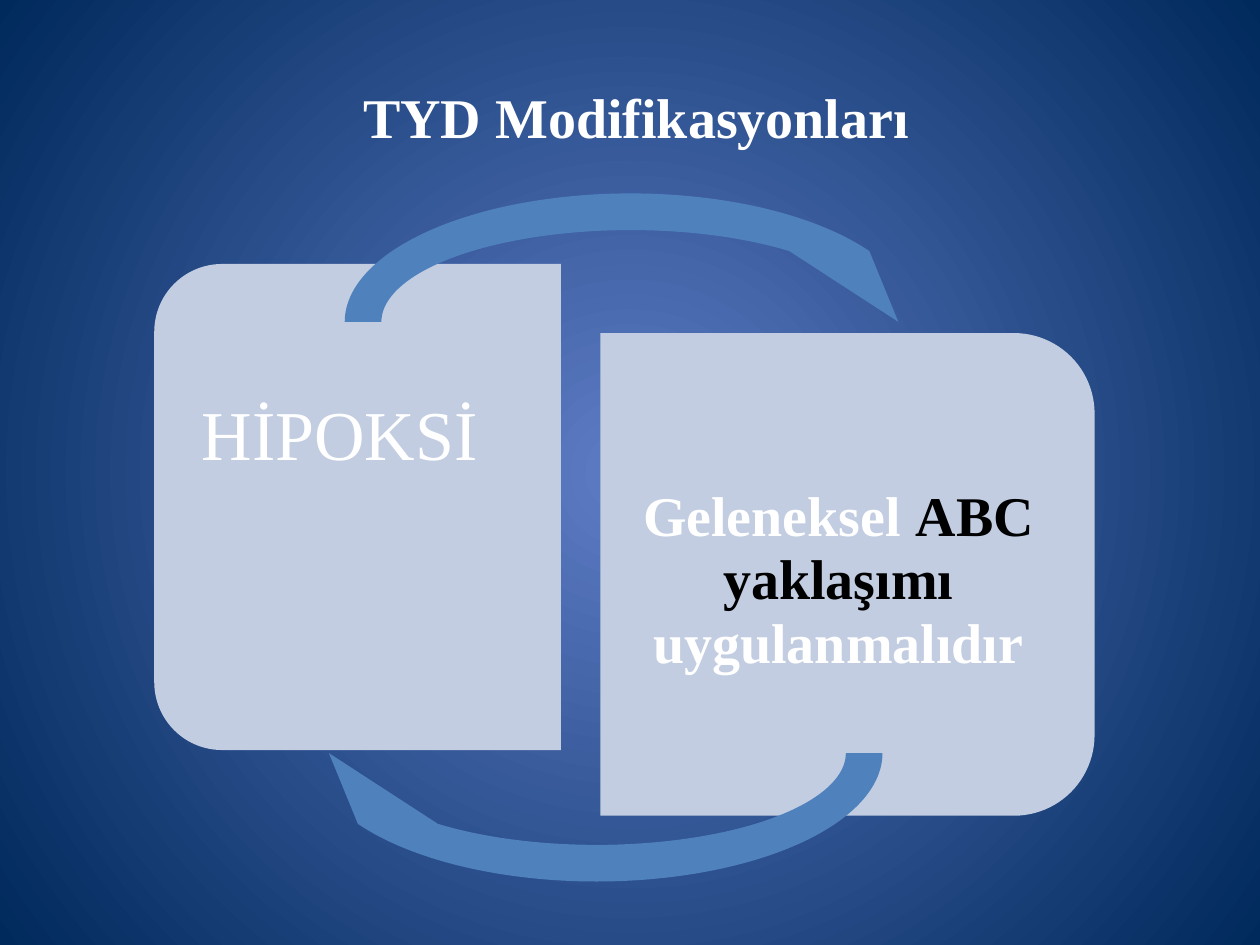
"""Build the TYD Modifikasyonları slide with two panels and a cycle of arrows."""
from lxml import etree
from pptx import Presentation
from pptx.dml.color import RGBColor
from pptx.enum.shapes import MSO_SHAPE as SHAPE
from pptx.enum.text import MSO_ANCHOR as ANCHOR, PP_ALIGN as ALIGN
from pptx.oxml.ns import qn
from pptx.util import Cm, Pt

WHITE, BLACK, PANEL, ARROW = "FFFFFF", "000000", "C2CDE1", "4F81BD"


def rgb(value):
    return RGBColor.from_string(value)


prs = Presentation()
prs.slide_width, prs.slide_height = Cm(25.4), Cm(19.05)
s = prs.slides.add_slide(prs.slide_layouts[6])

fill = s.background.fill
fill.gradient()
for stop, color in zip(fill.gradient_stops, ("5E7CC5", "00295C")):
    stop.color.rgb = rgb(color)
grad = s.background._cSld.find(".//" + qn("a:gradFill"))
grad.remove(grad.find(qn("a:lin")))
circle = etree.SubElement(grad, qn("a:path"), path="circle")
etree.SubElement(circle, qn("a:fillToRect"), {side: "50000" for side in "ltrb"})

panel_adj = (0.167, 0)
arrow_adj = (0.125, 11.423, 204.577, 108, 0.125)
shapes = [
    (SHAPE.ROUND_2_SAME_RECTANGLE, (2.31, 6.12, 9.8, 8.2), 270, panel_adj, PANEL),
    (SHAPE.ROUND_2_SAME_RECTANGLE, (12.22, 6.6, 9.73, 9.96), 90, panel_adj, PANEL),
    (SHAPE.CIRCULAR_ARROW, (6.58, 3.53, 12.27, 5.92), 0, arrow_adj, ARROW),
    (SHAPE.CIRCULAR_ARROW, (5.89, 12.22, 12.27, 5.92), 180, arrow_adj, ARROW),
]
for kind, box, rotation, adjustments, color in shapes:
    sp = s.shapes.add_shape(kind, *map(Cm, box))
    sp.rotation = rotation
    for i, value in enumerate(adjustments):
        sp.adjustments[i] = value
    sp.fill.solid()
    sp.fill.fore_color.rgb = rgb(color)
    sp.line.fill.background()
    sp.shadow.inherit = False

advice = [("Geleneksel ", WHITE), ("ABC yaklaşımı ", BLACK), ("uygulanmalıdır", WHITE)]
texts = [
    ((1.27, 0.76, 22.86, 3.18), (0.25, 0.13, 0.25, 0.13), ANCHOR.MIDDLE, ALIGN.CENTER,
     1, 32, True, [(" TYD Modifikasyonları", WHITE)]),
    ((3.51, 5.72, 7.8, 9), (0.56, 3.91, 0.84, 0.94), ANCHOR.TOP, ALIGN.LEFT,
     0.94, 40, False, [("HİPOKSİ", WHITE)]),
    ((12.09, 8, 9.5, 8.79), (0.38, 1.8, 0.25, 0.43), ANCHOR.TOP, ALIGN.CENTER,
     0.94, 32, True, advice),
]
for box, margins, anchor, align, spacing, size, bold, runs in texts:
    tf = s.shapes.add_textbox(*map(Cm, box)).text_frame
    tf.word_wrap = True
    tf.vertical_anchor = anchor
    tf.margin_left, tf.margin_top, tf.margin_right, tf.margin_bottom = map(Cm, margins)
    p = tf.paragraphs[0]
    p.alignment = align
    p.line_spacing = spacing
    p.font.name, p.font.size, p.font.bold = "Times New Roman", Pt(size), bold
    for text, color in runs:
        r = p.add_run()
        r.text = text
        r.font.color.rgb = rgb(color)

prs.save("out.pptx")
